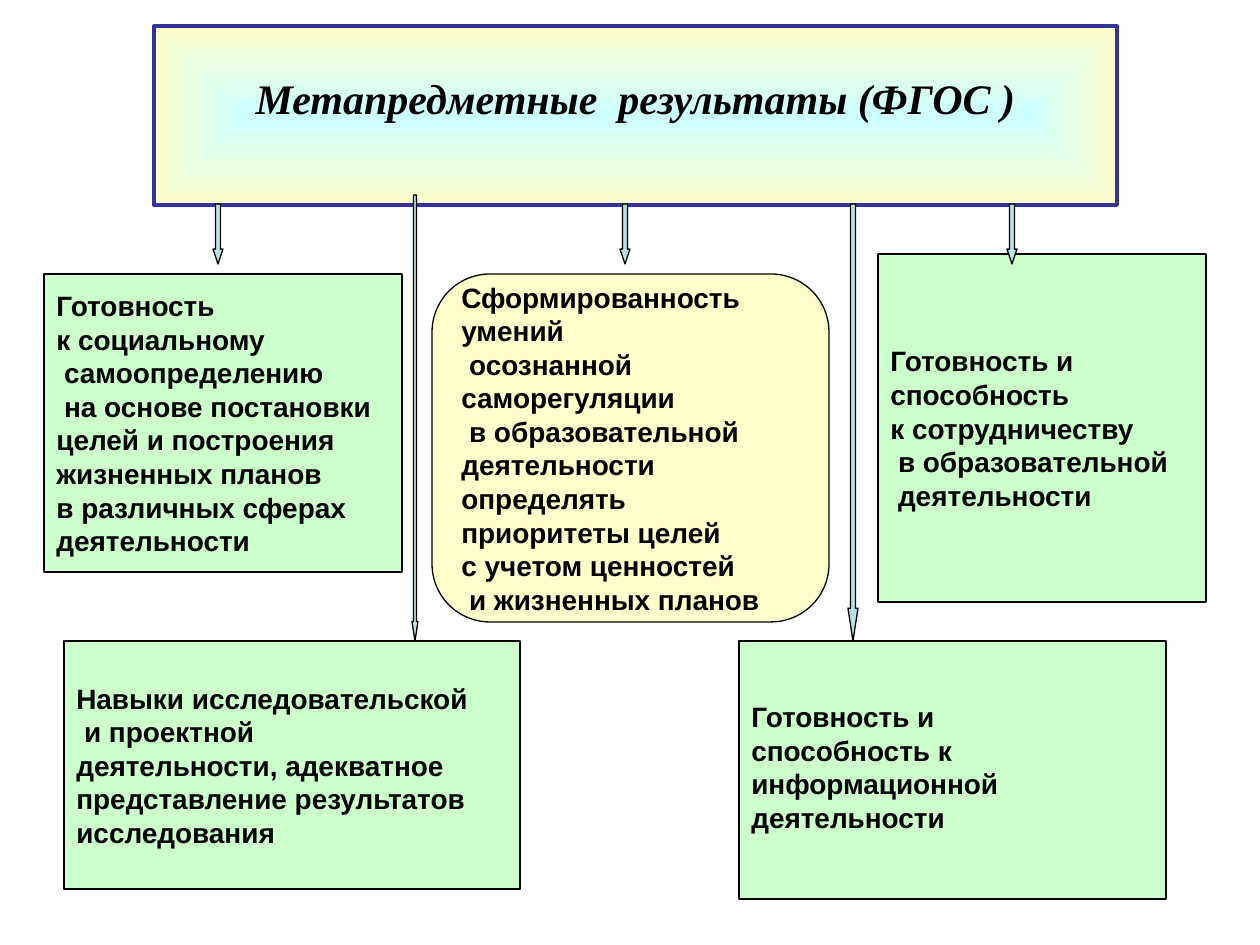
from dataclasses import dataclass

from lxml import etree
from pptx import Presentation
from pptx import util as u
from pptx.dml.color import RGBColor
from pptx.enum import shapes, text
from pptx.oxml.ns import qn

EMU_PER_PX = 914400 / 126


def px(length):
    return u.Emu(round(length * EMU_PER_PX))


def assign(target, values):
    for name, value in values.items():
        setattr(target, name, value)


@dataclass(frozen=True)
class Theme:
    ink: str = "000000"
    frame: str = "333399"
    green: str = "CCFFCC"
    cream: str = "FFFFCC"
    aqua: str = "CCFFFF"
    arrow: str = "BBE0E3"
    title_size: int = 24
    body_size: int = 16
    thin: float = 0.75
    thick: float = 2.25
    title_font: str = "Times New Roman"
    body_font: str = "Arial"


class SlideBuilder:
    def __init__(self, slide, theme):
        self.slide = slide
        self.theme = theme

    def place(self, shape, bounds):
        assign(shape, dict(zip(("left", "top", "width", "height"), map(px, bounds))))

    def outline(self, shape, color, width):
        shape.line.color.rgb = RGBColor.from_string(color)
        shape.line.width = u.Pt(width)

    def set_text(self, shape, lines, font, paragraph_format):
        frame = shape.text_frame
        assign(frame, {"word_wrap": False, "auto_size": text.MSO_AUTO_SIZE.NONE,
                       "vertical_anchor": text.MSO_ANCHOR.MIDDLE})
        frame.text = "\n".join(lines)
        for paragraph in frame.paragraphs:
            assign(paragraph, paragraph_format)
            for run in paragraph.runs:
                assign(run.font, {"bold": True, **font})
                run.font.color.rgb = RGBColor.from_string(self.theme.ink)

    def title(self, bounds, line, bottom_inset):
        theme = self.theme
        shape = self.slide.shapes.title
        self.place(shape, bounds)
        self.outline(shape, theme.frame, theme.thick)
        self.glow(shape, theme.aqua, theme.cream)
        font = {"name": theme.title_font, "size": u.Pt(theme.title_size), "italic": True}
        self.set_text(shape, [line], font, {"alignment": text.PP_ALIGN.CENTER})
        shape.text_frame.margin_bottom = px(bottom_inset)

    def glow(self, shape, inner, outer):
        """Fill the shape with a gradient running from its centre to its edges."""
        shape.fill.gradient()
        for stop, color in zip(shape.fill.gradient_stops, (inner, outer)):
            stop.color.rgb = RGBColor.from_string(color)
        linear = next(shape.element.iter(qn("a:lin")))
        route = etree.Element(qn("a:path"), {"path": "shape"})
        etree.SubElement(route, qn("a:fillToRect"), dict.fromkeys("ltrb", "50000"))
        linear.getparent().replace(linear, route)

    def shape(self, kind, bounds, fill):
        shape = self.slide.shapes.add_shape(kind, *map(px, bounds))
        shape.shadow.inherit = False
        shape.fill.solid()
        shape.fill.fore_color.rgb = RGBColor.from_string(fill)
        self.outline(shape, self.theme.ink, self.theme.thin)
        return shape

    def box(self, bounds, lines, rounded=False, **paragraph_format):
        theme = self.theme
        kind = shapes.MSO_SHAPE.ROUNDED_RECTANGLE if rounded else shapes.MSO_SHAPE.RECTANGLE
        shape = self.shape(kind, bounds, theme.cream if rounded else theme.green)
        font = {"name": theme.body_font, "size": u.Pt(theme.body_size)}
        self.set_text(shape, lines, font,
                      {"alignment": text.PP_ALIGN.JUSTIFY, **paragraph_format})

    def arrow(self, bounds, head):
        shape = self.shape(shapes.MSO_SHAPE.DOWN_ARROW, bounds, self.theme.arrow)
        shape.adjustments[0] = 0.5
        shape.adjustments[1] = head


def main():
    presentation = Presentation()
    assign(presentation, {"slide_width": px(1260), "slide_height": px(945)})
    slide = presentation.slides.add_slide(presentation.slide_layouts[5])
    builder = SlideBuilder(slide, Theme())

    builder.title((154, 26, 963, 179), "Метапредметные  результаты (ФГОС )", 42)

    builder.box((878, 254, 328, 348), [
        "Готовность и", "способность", "к сотрудничеству",
        " в образовательной", " деятельности"])
    builder.box((432, 274, 397, 348), [
        "Сформированность", "умений", " осознанной", "саморегуляции",
        " в образовательной", "деятельности", "определять",
        "приоритеты целей", "с учетом ценностей", " и жизненных планов"],
        rounded=True)
    builder.box((44, 274, 358, 298), [
        "Готовность", "к социальному", " самоопределению",
        " на основе постановки", "целей и построения", "жизненных планов",
        "в различных сферах", "деятельности"])
    builder.box((64, 641, 456, 248), [
        "Навыки исследовательской", " и проектной", "деятельности, адекватное",
        "представление результатов", "исследования"])
    builder.box((739, 641, 427, 258), [
        "Готовность и", "способность к", "информационной", "деятельности"],
        alignment=text.PP_ALIGN.LEFT, line_spacing=0.8, space_before=u.Pt(3.7))

    builder.arrow((412, 195, 6, 446), 3.25)
    builder.arrow((848, 204, 10, 437), 3.27)
    for left in (213, 1007, 620):
        builder.arrow((left, 204, 10, 60), 1.48)

    presentation.save("out.pptx")


if __name__ == "__main__":
    main()
